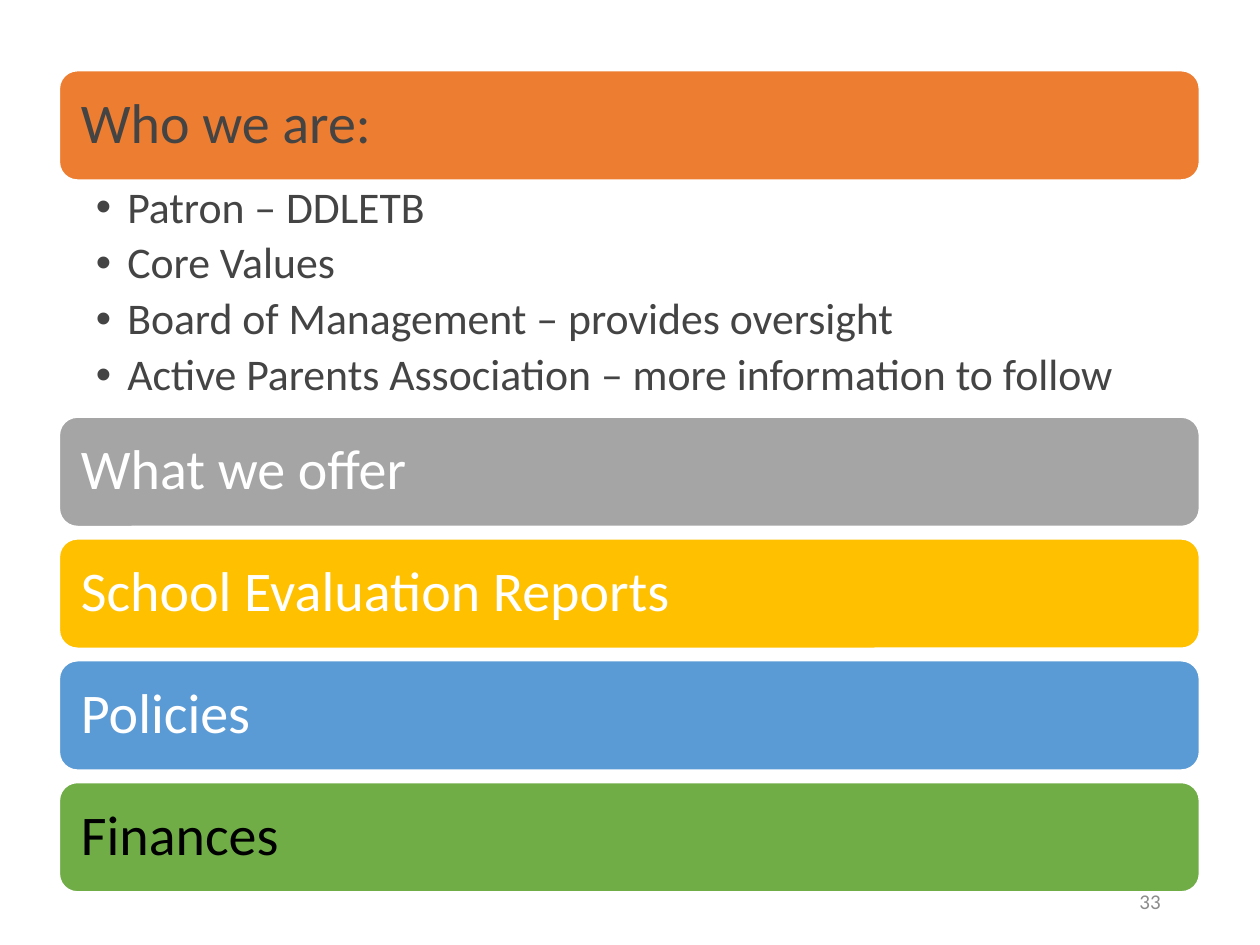
"""Builds the school overview slide: five topic bars, with details under the first."""
import pptx
import pptx.dml.color
import pptx.enum.shapes
import pptx.enum.text
import pptx.util
from lxml import etree

Align = pptx.enum.text.PP_ALIGN
Anchor = pptx.enum.text.MSO_ANCHOR
COLORS = {
    "orange": "ED7D31", "gray": "A5A5A5", "gold": "FFC000", "blue": "5B9BD5",
    "green": "70AD47", "dark": "444444", "white": "FFFFFF", "black": "000000",
    "muted": "8C8C8C",
}
LEFT, WIDTH = 4.7, 90.5
FIRST_TOP, BAR_HEIGHT, BAR_GAP = 7.47, 11.6, 1.29
DETAILS_HEIGHT = 25.06


def color(name):
    return pptx.dml.color.RGBColor.from_string(COLORS[name])


def add_bullet(paragraph, indent):
    properties = paragraph._p.get_or_add_pPr()
    properties.set("marL", str(pptx.util.Inches(indent)))
    properties.set("indent", str(-pptx.util.Inches(indent)))
    font = etree.SubElement(properties, pptx.oxml.ns.qn("a:buFont"))
    font.set("typeface", "Arial")
    bullet = etree.SubElement(properties, pptx.oxml.ns.qn("a:buChar"))
    bullet.set("char", "•")


def write(shape, *lines, size, ink, font="Calibri", align=Align.LEFT,
          anchor=Anchor.MIDDLE, insets=(0.1, 0.05, 0.1, 0.05),
          spacing=0.9, after=0, indent=None):
    frame = shape.text_frame
    frame.word_wrap = True
    frame.vertical_anchor = anchor
    (frame.margin_left, frame.margin_top,
     frame.margin_right, frame.margin_bottom) = map(pptx.util.Inches, insets)
    for index, line in enumerate(lines):
        paragraph = frame.add_paragraph() if index else frame.paragraphs[0]
        paragraph.alignment = align
        paragraph.line_spacing = spacing
        paragraph.space_after = pptx.util.Pt(after)
        if indent:
            add_bullet(paragraph, indent)
        run = paragraph.add_run()
        run.text = line
        run.font.name = font
        run.font.size = pptx.util.Pt(size)
        run.font.color.rgb = color(ink)


class Deck:
    """Holds the presentation, its 100 by 100 grid and the current slide."""

    def __init__(self, width, height):
        self.presentation = pptx.Presentation()
        self.presentation.slide_width = pptx.util.Inches(width)
        self.presentation.slide_height = pptx.util.Inches(height)
        self.column, self.row = width / 100, height / 100
        self.slide = self.presentation.slides.add_slide(
            self.presentation.slide_layouts[6])

    def place(self, left, top, width, height):
        return [pptx.util.Inches(length) for length in (
            left * self.column, top * self.row,
            width * self.column, height * self.row)]

    def bar(self, top, topic, fill, ink):
        bar = self.slide.shapes.add_shape(
            pptx.enum.shapes.MSO_SHAPE.ROUNDED_RECTANGLE,
            *self.place(LEFT, top, WIDTH, BAR_HEIGHT))
        bar.shadow.inherit = False
        bar.fill.solid()
        bar.fill.fore_color.rgb = color(fill)
        bar.line.color.rgb = color("white")
        bar.line.width = pptx.util.Pt(1)
        write(bar, topic, size=32, ink=ink, insets=(0.13, 0.13, 0.13, 0.13))

    def text(self, left, top, width, height, *lines, **style):
        box = self.slide.shapes.add_textbox(*self.place(left, top, width, height))
        write(box, *lines, **style)


def main():
    deck = Deck(10, 7.5)
    deck.bar(FIRST_TOP, "Who we are:", "orange", "dark")

    details_top = FIRST_TOP + BAR_HEIGHT
    deck.text(LEFT, details_top, WIDTH, DETAILS_HEIGHT,
              "Patron – DDLETB",
              "Core Values",
              "Board of Management – provides oversight",
              "Active Parents Association – more information to follow",
              size=25, ink="dark", anchor=Anchor.TOP,
              insets=(0.29, 0.04, 0.25, 0.04), after=5, indent=0.25)

    topics = [
        ("What we offer", "gray", "white"),
        ("School Evaluation Reports", "gold", "white"),
        ("Policies", "blue", "white"),
        ("Finances", "green", "black"),
    ]
    for index, topic in enumerate(topics):
        top = details_top + DETAILS_HEIGHT + index * (BAR_HEIGHT + BAR_GAP)
        deck.bar(top, *topic)

    deck.text(70.6, 92.67, 22.5, 5.33, "33", size=12, ink="muted",
              align=Align.RIGHT, spacing=1, after=6)
    deck.presentation.save("out.pptx")


if __name__ == "__main__":
    main()
